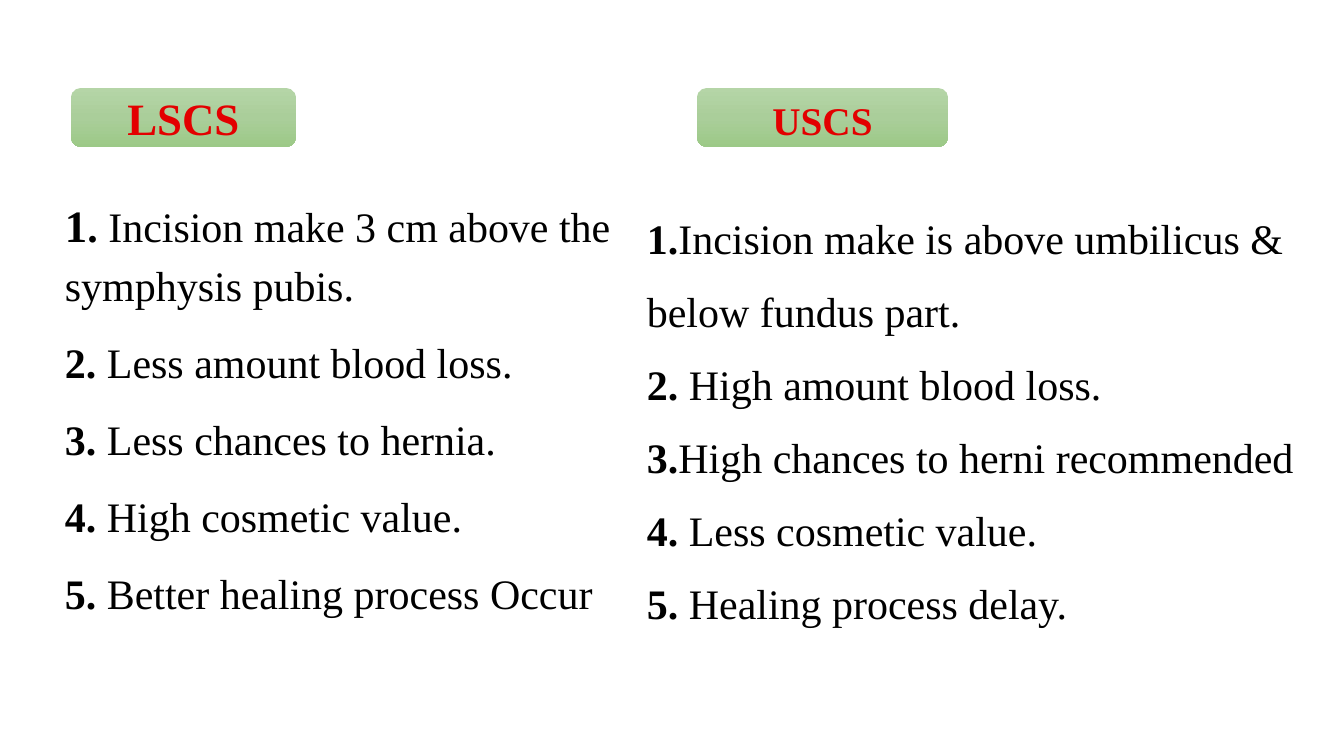
from copy import deepcopy
from dataclasses import dataclass

from pptx import Presentation
from pptx.dml.color import RGBColor
from pptx.enum.shapes import MSO_SHAPE
from pptx.enum.text import MSO_ANCHOR, PP_ALIGN
from pptx.util import Emu, Pt

ROUNDED = MSO_SHAPE.ROUNDED_RECTANGLE
MIDDLE = MSO_ANCHOR.MIDDLE
CENTER = PP_ALIGN.CENTER

PX_PER_INCH = 100.8
FONT = "Times New Roman"
BODY_SIZE = 30
HEADING_RED = "E30000"
BLACK = "000000"
GREEN_TOP, GREEN_MIDDLE, GREEN_BOTTOM = "B5D5A7", "AACE9A", "9CC987"


@dataclass
class Box:
    left: int
    top: int
    width: int
    height: int


@dataclass
class Heading:
    text: str
    box: Box
    size: int
    line_spacing: float


@dataclass
class Point:
    number: str
    text: str
    line_spacing: float
    digit_size: int = BODY_SIZE


@dataclass
class PointList:
    box: Box
    space_before: int
    points: list[Point]


HEADINGS = [
    Heading("LSCS", Box(71, 88, 225, 59), 32, 1.0),
    Heading("USCS", Box(697, 88, 251, 59), 28, 1.1),
]
POINT_LISTS = [
    PointList(Box(55, 185, 628, 480), 10, [
        Point("1.", " Incision make 3 cm above the symphysis pubis.", 1.15, 32),
        Point("2.", " Less amount blood loss.", 1.25),
        Point("3.", " Less chances to hernia.", 1.25),
        Point("4.", " High cosmetic value.", 1.25),
        Point("5.", " Better healing process Occur", 1.25),
    ]),
    PointList(Box(637, 185, 672, 408), 0, [
        Point("1.", "Incision make is above umbilicus & below fundus part.", 1.45),
        Point("2.", " High amount blood loss.", 1.45),
        Point("3.", "High chances to herni recommended", 1.45),
        Point("4.", " Less cosmetic value.", 1.45),
        Point("5.", " Healing process delay.", 1.45),
    ]),
]


def px(length: int) -> Emu:
    return Emu(round(length * 914400 / PX_PER_INCH))


def place(box: Box) -> tuple[Emu, Emu, Emu, Emu]:
    return px(box.left), px(box.top), px(box.width), px(box.height)


def color(value: str) -> RGBColor:
    return RGBColor.from_string(value)


def fill_green(shape) -> None:
    fill = shape.fill
    fill.gradient()
    fill.gradient_angle = 270
    # A third stop between the two that python-pptx provides
    first_stop = shape._element.spPr.xpath("./a:gradFill/a:gsLst/a:gs")[0]
    first_stop.addnext(deepcopy(first_stop))
    stops = zip(fill.gradient_stops, (0, 0.5, 1),
                (GREEN_TOP, GREEN_MIDDLE, GREEN_BOTTOM))
    for stop, position, value in stops:
        stop.position = position
        stop.color.rgb = color(value)


def add_heading(slide, heading: Heading) -> None:
    banner = slide.shapes.add_shape(ROUNDED, *place(heading.box))
    banner.shadow.inherit = False
    banner.line.fill.background()
    fill_green(banner)
    banner.text_frame.vertical_anchor = MIDDLE
    title = banner.text_frame.paragraphs[0]
    title.text = heading.text
    title.alignment = CENTER
    title.line_spacing = heading.line_spacing
    title.font.name = FONT
    title.font.size = Pt(heading.size)
    title.font.bold = True
    title.font.color.rgb = color(HEADING_RED)


def add_run(paragraph, text: str, size: int, bold: bool) -> None:
    run = paragraph.add_run()
    run.text = text
    run.font.size = Pt(size)
    run.font.bold = bold


def add_point_list(slide, point_list: PointList) -> None:
    frame = slide.shapes.add_textbox(*place(point_list.box)).text_frame
    frame.word_wrap = True
    for index, point in enumerate(point_list.points):
        paragraph = frame.add_paragraph() if index else frame.paragraphs[0]
        paragraph.line_spacing = point.line_spacing
        paragraph.space_before = Pt(point_list.space_before if index else 0)
        paragraph.font.name = FONT
        paragraph.font.color.rgb = color(BLACK)
        if point.digit_size == BODY_SIZE:
            add_run(paragraph, point.number, BODY_SIZE, True)
        else:
            add_run(paragraph, point.number[0], point.digit_size, True)
            add_run(paragraph, point.number[1:], BODY_SIZE, True)
        add_run(paragraph, point.text, BODY_SIZE, False)
        for run in paragraph.runs:
            run.font.name = FONT
            run.font.color.rgb = color(BLACK)


def main() -> None:
    presentation = Presentation()
    presentation.slide_width = px(1344)
    presentation.slide_height = px(756)
    slide = presentation.slides.add_slide(presentation.slide_layouts[6])

    # Headings of the two columns
    for heading in HEADINGS:
        add_heading(slide, heading)

    # Numbered comparison points
    for point_list in POINT_LISTS:
        add_point_list(slide, point_list)

    presentation.save("out.pptx")


if __name__ == "__main__":
    main()
